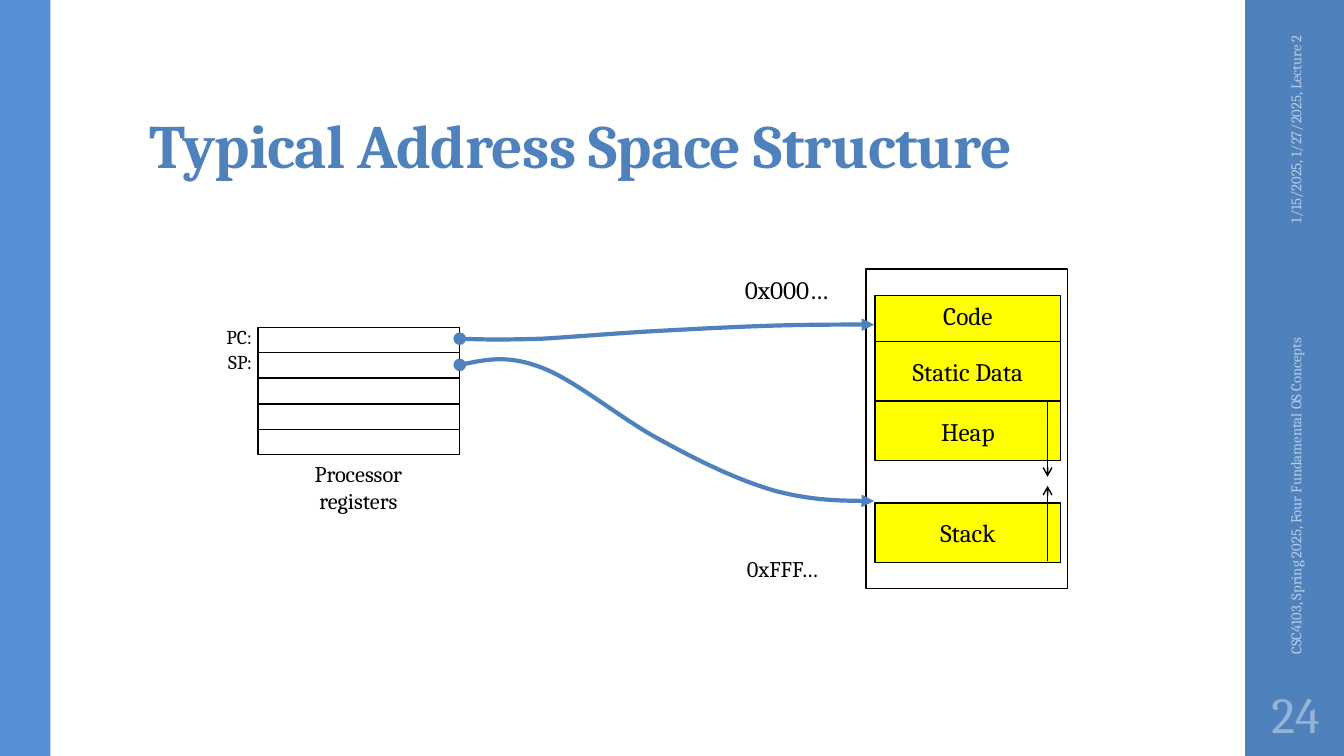
from typing import NamedTuple

import pptx
import pptx.dml.color
import pptx.enum.shapes
import pptx.enum.text
import pptx.oxml
import pptx.oxml.ns
import pptx.util
from pptx.util import Inches

FONT = "Cambria"
BLUE, BLACK, YELLOW = "4F81BD", "000000", "FFFF00"
ALIGN = pptx.enum.text.PP_ALIGN
ANCHOR = pptx.enum.text.MSO_ANCHOR
RECT = pptx.enum.shapes.MSO_SHAPE.RECTANGLE
STRAIGHT = pptx.enum.shapes.MSO_CONNECTOR.STRAIGHT
NS = 'xmlns:a="http://schemas.openxmlformats.org/drawingml/2006/main"'
qn = pptx.oxml.ns.qn


class Box(NamedTuple):
    left: float
    top: float
    width: float
    height: float
    fill: str = ""
    line: str = ""
    text: str = ""
    anchor: ANCHOR = ANCHOR.MIDDLE


class Label(NamedTuple):
    text: str
    left: float
    top: float
    width: float
    height: float
    size: float
    color: str = BLACK
    align: ALIGN = ALIGN.LEFT
    anchor: ANCHOR = ANCHOR.TOP
    rotation: int = 0
    wrap: bool = False


def rgb(color: str) -> pptx.dml.color.RGBColor:
    return pptx.dml.color.RGBColor.from_string(color)


def write(tf, text: str, size: float, color: str, align: ALIGN) -> None:
    tf.text = text
    for p in tf.paragraphs:
        p.alignment = align
        for r in p.runs:
            r.font.name = FONT
            r.font.size = pptx.util.Pt(size)
            r.font.color.rgb = rgb(color)


def add_box(s, box: Box) -> None:
    sp = s.shapes.add_shape(RECT, *map(Inches, box[:4]))
    sp.shadow.inherit = False
    if box.fill:
        sp.fill.solid()
        sp.fill.fore_color.rgb = rgb(box.fill)
    else:
        sp.fill.background()
    if box.line:
        sp.line.color.rgb = rgb(box.line)
        sp.line.width = pptx.util.Pt(1)
    else:
        sp.line.fill.background()
    if box.text:
        sp.text_frame.vertical_anchor = box.anchor
        write(sp.text_frame, box.text, 18, BLACK, ALIGN.CENTER)


def add_label(s, label: Label) -> None:
    sp = s.shapes.add_textbox(*map(Inches, label[1:5]))
    sp.rotation = label.rotation
    tf = sp.text_frame
    tf.word_wrap = label.wrap
    tf.vertical_anchor = label.anchor
    write(tf, label.text, label.size, label.color, label.align)


def add_ends(sp, **ends: str) -> None:
    """Put line ends such as headEnd="oval" on an outline."""
    ln = sp.line._get_or_add_ln()
    for tag, kind in ends.items():
        ln.append(pptx.oxml.parse_xml(f'<a:{tag} {NS} type="{kind}"/>'))


def add_curve(s, points: list[tuple[float, float]]) -> None:
    """Draw a pointer: a start, then three points for each Bézier segment."""
    start, *rest = [(Inches(x), Inches(y)) for x, y in points]
    fb = s.shapes.build_freeform(*start)
    fb.add_line_segments(rest, close=False)
    sp = fb.convert_to_shape()
    steps = list(sp._element.iter(qn("a:lnTo")))
    for i in range(0, len(steps), 3):
        curve = pptx.oxml.parse_xml(f"<a:cubicBezTo {NS}/>")
        steps[i].addprevious(curve)
        for step in steps[i:i + 3]:
            curve.append(step[0])
            step.getparent().remove(step)
    sp.shadow.inherit = False
    sp.fill.background()
    sp.line.color.rgb = rgb(BLUE)
    sp.line.width = pptx.util.Pt(3)
    add_ends(sp, headEnd="oval", tailEnd="triangle")


def add_arrow(s, x: float, start: float, end: float) -> None:
    sp = s.shapes.add_connector(STRAIGHT, *map(Inches, (x, start, x, end)))
    sp.line.color.rgb = rgb(BLACK)
    sp.line.width = pptx.util.Pt(1)
    add_ends(sp, tailEnd="arrow")
    sp._element.spPr.append(pptx.oxml.parse_xml(f"<a:effectLst {NS}/>"))


def add_title(s, text: str) -> None:
    sp = s.shapes.title
    sp.left, sp.top, sp.width, sp.height = map(Inches, (1.38, 0.32, 10.6, 1.53))
    tf = sp.text_frame
    tf.vertical_anchor = ANCHOR.BOTTOM
    tf.margin_top, tf.margin_bottom = Inches(0.03), Inches(0.05)
    write(tf, text, 44, BLUE, ALIGN.LEFT)
    p = tf.paragraphs[0]
    p.line_spacing = 0.9
    r = p.runs[0]
    r.font.bold = True
    r.font._element.set("spc", "-50")


# Register file and address space geometry
REG_LEFT, REG_TOP, REG_WIDTH, ROW = 2.56, 3.25, 2, 0.25
SEG_LEFT, SEG_WIDTH, SEG_HEIGHT = 8.68, 1.84, 0.59

RAILS = [Box(12.35, 0, 0.98, 7.5, BLUE), Box(0, 0, 0.5, 7.5, "558ED5")]
REGISTERS = [Box(REG_LEFT, REG_TOP, REG_WIDTH, 1.26, line=BLACK)] + [
    Box(REG_LEFT, top, REG_WIDTH, ROW, line=BLACK) for top in (3.5, 4.01)]
MEMORY = [Box(8.59, 2.67, 2, 3.17, line=BLACK)] + [
    Box(SEG_LEFT, top, SEG_WIDTH, height, YELLOW, BLACK, name, anchor)
    for name, top, height, anchor in (
        ("Code", 2.93, 0.46, ANCHOR.TOP),
        ("Static Data", 3.39, SEG_HEIGHT, ANCHOR.MIDDLE),
        ("Heap", 3.98, SEG_HEIGHT, ANCHOR.MIDDLE),
        ("Stack", 4.99, SEG_HEIGHT, ANCHOR.MIDDLE),
    )]
LABELS = [
    Label("1/15/2025, 1/27/2025, Lecture 2", 11.81, 1.09, 2.08, 0.4, 10.5,
          "B9CDE5", ALIGN.RIGHT, ANCHOR.MIDDLE, 270, True),
    Label("CSC4103, Spring 2025, Four Fundamental OS Concepts", 10.89, 4.43,
          3.92, 0.4, 10.5, "B9CDE5", ALIGN.LEFT, ANCHOR.MIDDLE, 270, True),
    Label("24", 12.35, 6.75, 1, 0.65, 36, "95B3D7", ALIGN.CENTER,
          ANCHOR.MIDDLE, wrap=True),
    Label("Processor\nregisters", 2.96, 4.52, 1.19, 0.64, 16, align=ALIGN.CENTER),
    Label("PC:", 2.07, 3.17, 0.53, 0.34, 14, align=ALIGN.RIGHT),
    Label("SP:", 2.07, 3.42, 0.53, 0.34, 14, align=ALIGN.RIGHT),
    Label("0x000…", 7.29, 2.67, 1.15, 0.4, 18),
    Label("0xFFF…", 7.31, 5.46, 1.12, 0.37, 16),
]
POINTER_X = (4.56, 4.8, 5.05, 5.38, 5.72, 6.19, 6.58,
             6.96, 7.34, 7.69, 8.04, 8.36, 8.67)
POINTER_YS = [
    (3.36, 3.37, 3.37, 3.36, 3.34, 3.3, 3.28,
     3.26, 3.24, 3.23, 3.22, 3.22, 3.22),
    (3.62, 3.57, 3.52, 3.65, 3.78, 4.18, 4.38,
     4.59, 4.77, 4.87, 4.96, 4.97, 4.97),
]


def main() -> None:
    prs = pptx.Presentation()
    prs.slide_width, prs.slide_height = Inches(13.33), Inches(7.5)
    s = prs.slides.add_slide(prs.slide_layouts[5])

    # Side rails and title
    for box in RAILS:
        add_box(s, box)
    add_title(s, "Typical Address Space Structure")

    # Registers, memory segments and their labels
    for box in REGISTERS + MEMORY:
        add_box(s, box)
    for label in LABELS:
        add_label(s, label)

    # Pointers from PC and SP into memory
    for ys in POINTER_YS:
        add_curve(s, list(zip(POINTER_X, ys)))

    # Growth of the stack and the heap
    for start, end in ((5.57, 4.82), (3.98, 4.73)):
        add_arrow(s, 10.39, start, end)

    prs.save("out.pptx")


if __name__ == "__main__":
    main()
